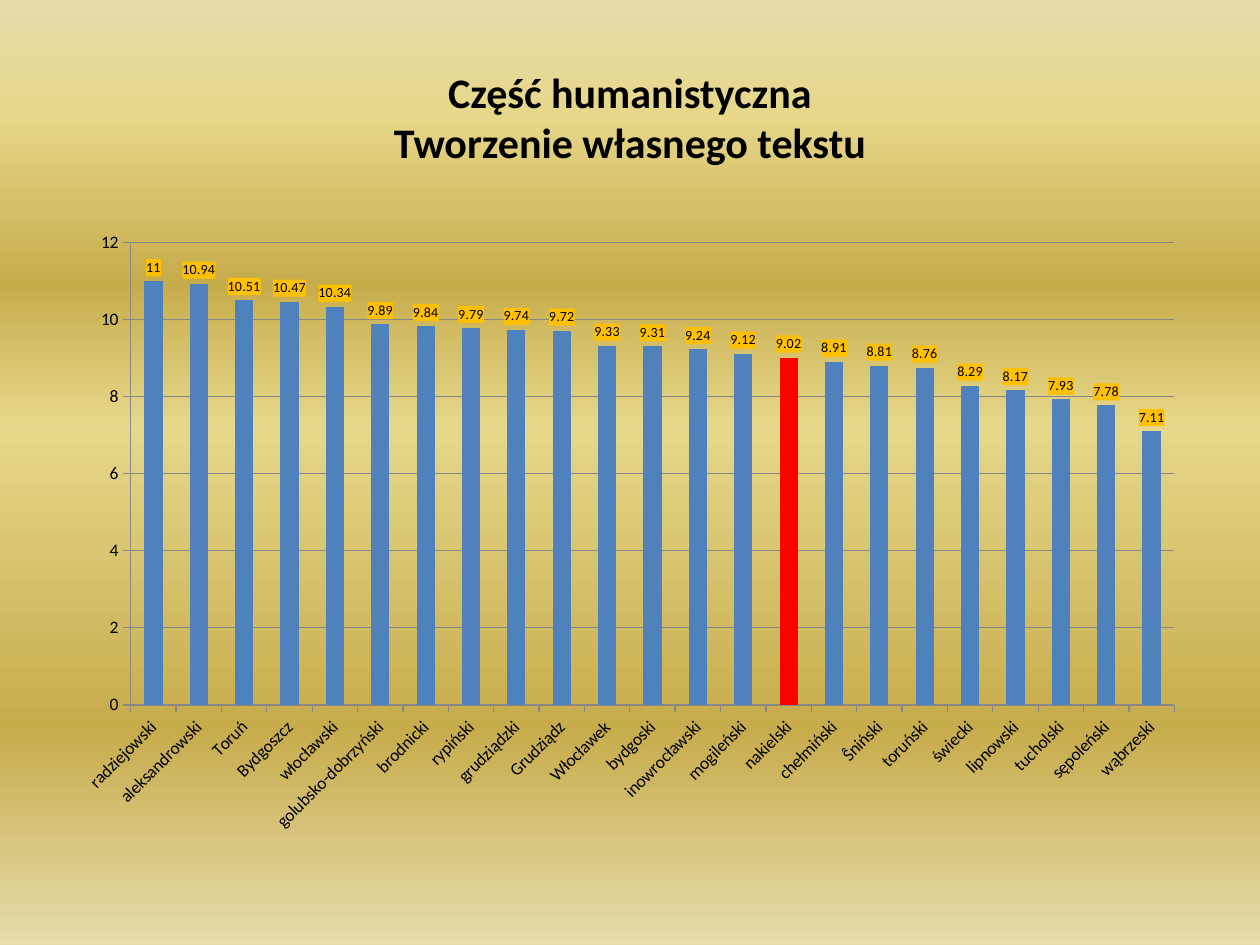
from pptx import Presentation
from pptx.chart.data import CategoryChartData
from pptx.dml.color import RGBColor
from pptx.enum.chart import XL_CHART_TYPE, XL_LABEL_POSITION, XL_TICK_MARK
from pptx.enum.text import MSO_ANCHOR, PP_ALIGN
from pptx.oxml import parse_xml
from pptx.oxml.ns import nsdecls, qn
from pptx.util import Pt

TITLE = "Część humanistyczna\vTworzenie własnego tekstu"
SCORES = [
    ("radziejowski", 11), ("aleksandrowski", 10.94), ("Toruń", 10.51),
    ("Bydgoszcz", 10.47), ("włocławski", 10.34), ("golubsko-dobrzyński", 9.89),
    ("brodnicki", 9.84), ("rypiński", 9.79), ("grudziądzki", 9.74),
    ("Grudziądz", 9.72), ("Włocławek", 9.33), ("bydgoski", 9.31),
    ("inowrocławski", 9.24), ("mogileński", 9.12), ("nakielski", 9.02),
    ("chełmiński", 8.91), ("Ŝniński", 8.81), ("toruński", 8.76),
    ("świecki", 8.29), ("lipnowski", 8.17), ("tucholski", 7.93),
    ("sępoleński", 7.78), ("wąbrzeski", 7.11),
]
HIGHLIGHT = "nakielski"
COLORS = {
    "text": "000000", "bar": "4F81BD", "highlight": "FF0000",
    "label": "FFC000", "line": "878787",
    "pale": "E6DCAC", "light": "E6D78A", "dark": "C7AC4C",
}
GRADIENT = [(0, "pale"), (12, "light"), (30, "dark"),
            (45, "light"), (77, "dark"), (100, "pale")]
FONT = "Calibri"


def rgb(name):
    return RGBColor.from_string(COLORS[name])


def set_font(font, size, bold=False):
    font.name = FONT
    font.size = Pt(size)
    font.bold = bold
    font.color.rgb = rgb("text")


def add_background(s):
    fill = s.background.fill
    fill.gradient()
    fill.gradient_angle = 270
    stops = "".join(
        f'<a:gs pos="{pos * 1000}"><a:srgbClr val="{COLORS[name]}"/></a:gs>'
        for pos, name in GRADIENT)
    old = next(s.background._cSld.iter(qn("a:gsLst")))
    old.getparent().replace(
        old, parse_xml(f'<a:gsLst {nsdecls("a")}>{stops}</a:gsLst>'))


def add_title(s):
    title = s.shapes.title
    title.left, title.top, title.width, title.height = Pt(36), Pt(21.6), Pt(648), Pt(90)
    tf = title.text_frame
    tf.text = TITLE
    tf.vertical_anchor = MSO_ANCHOR.MIDDLE
    p = tf.paragraphs[0]
    p.alignment = PP_ALIGN.CENTER
    for r in p.runs:
        set_font(r.font, 24, True)


def add_score_chart(s):
    names, values = zip(*SCORES)
    data = CategoryChartData()
    data.categories = names
    data.add_series("Series 1", values)
    chart = s.shapes.add_chart(XL_CHART_TYPE.COLUMN_CLUSTERED, Pt(36), Pt(126),
                               Pt(648), Pt(356.4), data).chart
    chart.has_legend = False
    chart.has_title = False
    set_font(chart.font, 10)

    for axis in (chart.category_axis, chart.value_axis):
        axis.major_tick_mark = XL_TICK_MARK.OUTSIDE
        axis.format.line.color.rgb = rgb("line")
        set_font(axis.tick_labels.font, 10)
    body = next(chart.category_axis._element.iter(qn("a:bodyPr")))
    body.set("rot", "-2700000")
    body.set("vert", "horz")
    axis = chart.value_axis
    axis.minimum_scale, axis.maximum_scale, axis.major_unit = 0, 12, 2
    axis.major_gridlines.format.line.color.rgb = rgb("line")

    plot = chart.plots[0]
    plot.gap_width = 150
    plot.vary_by_categories = False
    series = plot.series[0]
    series.invert_if_negative = False
    bars = [(series, "bar"), (series.points[names.index(HIGHLIGHT)], "highlight")]
    for bar, color in bars:
        bar.format.fill.solid()
        bar.format.fill.fore_color.rgb = rgb(color)

    labels = series.data_labels
    labels.show_value = True
    labels.position = XL_LABEL_POSITION.OUTSIDE_END
    set_font(labels.font, 8)
    labels._element.find(qn("c:txPr")).addprevious(parse_xml(
        f'<c:spPr {nsdecls("c", "a")}><a:solidFill>'
        f'<a:srgbClr val="{COLORS["label"]}"/></a:solidFill></c:spPr>'))


prs = Presentation()
prs.slide_width, prs.slide_height = Pt(720), Pt(540)
s = prs.slides.add_slide(prs.slide_layouts[5])
add_background(s)
add_title(s)
add_score_chart(s)
prs.save("out.pptx")
